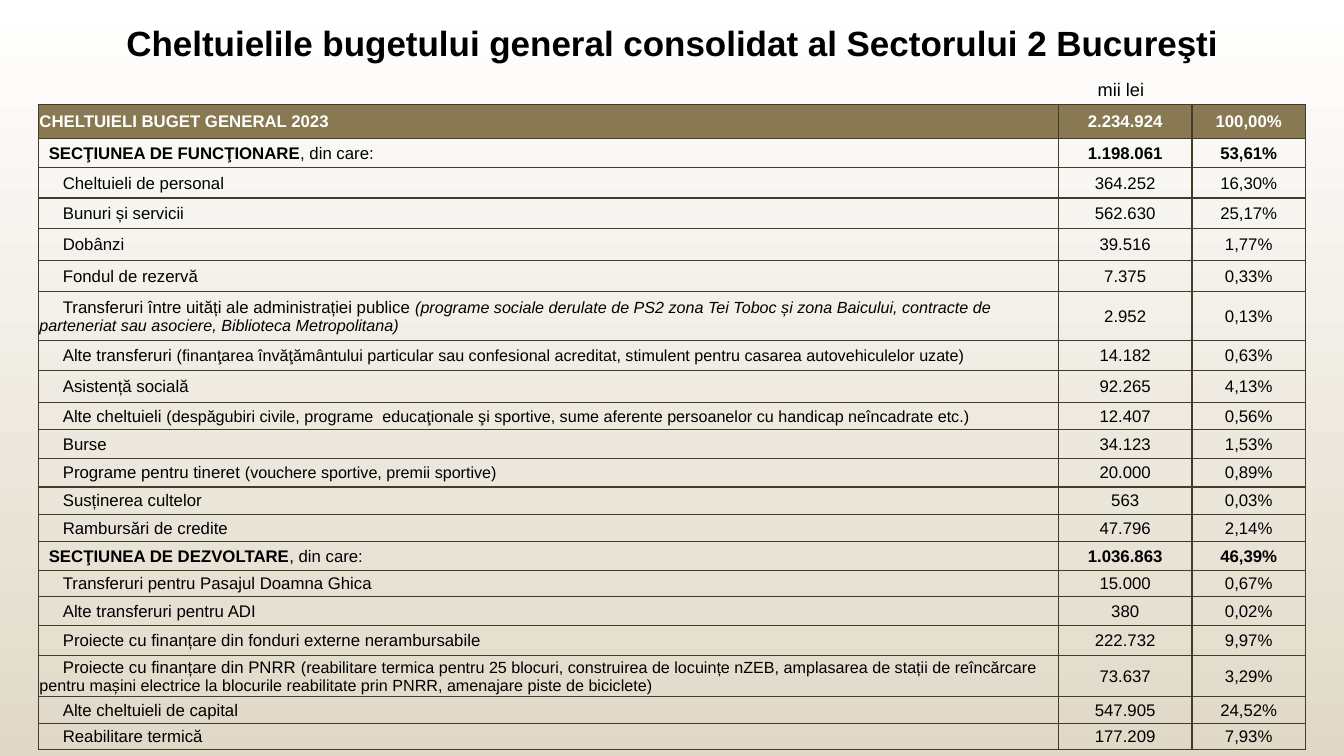
from lxml import etree
from pptx import Presentation
from pptx.dml.color import RGBColor
from pptx.enum.text import MSO_ANCHOR, PP_ALIGN
from pptx.oxml.ns import qn
from pptx.util import Pt

LEFT, CENTER = PP_ALIGN.LEFT, PP_ALIGN.CENTER
MIDDLE = MSO_ANCHOR.MIDDLE

COLORS = {
    "text": "000000",
    "header_text": "FFFFFF",
    "header": "887952",
    "border": "443C29",
    "bg_top": "FFFFFF",
    "bg_bottom": "E0D9C8",
}
FONT = "Arial"
COL_WIDTHS = [728.5, 95.5, 81]
INDENTS = {"total": 0, "section": 6.7, "item": 16.7}

ROWS = [
    ("total", 24.5, "CHELTUIELI BUGET GENERAL 2023", "", "2.234.924", "100,00%"),
    ("section", 20.5, "SECŢIUNEA DE FUNCŢIONARE", ", din care:", "1.198.061", "53,61%"),
    ("item", 22, "Cheltuieli de personal", "", "364.252", "16,30%"),
    ("item", 22, "Bunuri și servicii", "", "562.630", "25,17%"),
    ("item", 22.5, "Dobânzi", "", "39.516", "1,77%"),
    ("item", 22.5, "Fondul de rezervă", "", "7.375", "0,33%"),
    ("item", 35, "Transferuri între uități ale administrației publice ",
     "(programe sociale derulate de PS2 zona Tei Toboc și zona Baicului, contracte de "
     "parteneriat sau asociere, Biblioteca Metropolitana)", "2.952", "0,13%"),
    ("item", 21, "Alte transferuri ",
     "(finanţarea învăţământului particular sau confesional acreditat, stimulent pentru "
     "casarea autovehiculelor uzate)", "14.182", "0,63%"),
    ("item", 23, "Asistență socială", "", "92.265", "4,13%"),
    ("item", 19.5, "Alte cheltuieli ",
     "(despăgubiri civile, programe  educaţionale şi sportive, sume aferente persoanelor "
     "cu handicap neîncadrate etc.)", "12.407", "0,56%"),
    ("item", 20.5, "Burse", "", "34.123", "1,53%"),
    ("item", 20.5, "Programe pentru tineret ", "(vouchere sportive, premii sportive)",
     "20.000", "0,89%"),
    ("item", 19.5, "Susținerea cultelor", "", "563", "0,03%"),
    ("item", 19.5, "Rambursări de credite", "", "47.796", "2,14%"),
    ("section", 20.5, "SECŢIUNEA DE DEZVOLTARE", ", din care:", "1.036.863", "46,39%"),
    ("item", 19, "Transferuri pentru Pasajul Doamna Ghica", "", "15.000", "0,67%"),
    ("item", 20.5, "Alte transferuri pentru ADI", "", "380", "0,02%"),
    ("item", 21.5, "Proiecte cu finanțare din fonduri externe nerambursabile", "",
     "222.732", "9,97%"),
    ("item", 29.5, "Proiecte cu finanțare din PNRR ",
     "(reabilitare termica pentru 25 blocuri, construirea de locuințe nZEB, amplasarea de "
     "stații de reîncărcare pentru mașini electrice la blocurile reabilitate prin PNRR, "
     "amenajare piste de biciclete)", "73.637", "3,29%"),
    ("item", 19, "Alte cheltuieli de capital", "", "547.905", "24,52%"),
    ("item", 18.5, "Reabilitare termică", "", "177.209", "7,93%"),
]


def rgb(name):
    return RGBColor.from_string(COLORS[name])


def add_text(p, text, size=12, color="text", bold=False, italic=False, align=LEFT):
    p.alignment = align
    r = p.add_run()
    r.text = text
    r.font.name = FONT
    r.font.size = Pt(size)
    r.font.color.rgb = rgb(color)
    r.font.bold = bold
    r.font.italic = italic


def add_label(s, x, y, w, h, text, wrap=True, **fmt):
    tf = s.shapes.add_textbox(Pt(x), Pt(y), Pt(w), Pt(h)).text_frame
    tf.word_wrap = wrap
    add_text(tf.paragraphs[0], text, **fmt)


def set_background(s):
    fill = s.background.fill
    fill.gradient()
    fill.gradient_angle = 270
    for stop, name in zip(fill.gradient_stops, ("bg_top", "bg_bottom")):
        stop.color.rgb = rgb(name)


def set_borders(cell):
    tc_pr = cell._tc.get_or_add_tcPr()
    for side in ("a:lnL", "a:lnR", "a:lnT", "a:lnB"):
        ln = etree.SubElement(tc_pr, qn(side), w=str(Pt(1)))
        solid = etree.SubElement(ln, qn("a:solidFill"))
        etree.SubElement(solid, qn("a:srgbClr"), val=COLORS["border"])


def format_cell(cell, kind):
    cell.vertical_anchor = MIDDLE
    cell.margin_left = cell.margin_right = cell.margin_top = Pt(0.7)
    cell.margin_bottom = Pt(0)
    set_borders(cell)
    if kind == "total":
        cell.fill.solid()
        cell.fill.fore_color.rgb = rgb("header")
    else:
        cell.fill.background()


def fill_row(cells, kind, name, detail, amount, share):
    for cell in cells:
        format_cell(cell, kind)
    name_p, amount_p, share_p = [cell.text_frame.paragraphs[0] for cell in cells]
    fmt = {"bold": kind != "item", "color": "header_text" if kind == "total" else "text"}
    name_p._p.get_or_add_pPr().set("indent", str(Pt(INDENTS[kind])))
    add_text(name_p, name, **fmt)
    if detail:
        add_text(name_p, detail, size=11.5 if kind == "item" else 12,
                 italic=detail.startswith("(programe sociale"))
    add_text(amount_p, amount, align=CENTER, **fmt)
    add_text(share_p, share, align=CENTER, **fmt)


def add_budget_table(s, x, y):
    height = sum(row[1] for row in ROWS)
    table = s.shapes.add_table(len(ROWS), len(COL_WIDTHS), Pt(x), Pt(y),
                               Pt(sum(COL_WIDTHS)), Pt(height)).table
    table.first_row = table.horz_banding = False
    for col, width in zip(table.columns, COL_WIDTHS):
        col.width = Pt(width)
    for row, (kind, row_height, *texts) in zip(table.rows, ROWS):
        row.height = Pt(row_height)
        fill_row(list(row.cells), kind, *texts)


def main():
    prs = Presentation()
    prs.slide_width, prs.slide_height = Pt(960), Pt(540)
    s = prs.slides.add_slide(prs.slide_layouts[6])
    set_background(s)
    add_label(s, 77.5, 11.5, 805, 28,
              "Cheltuielile bugetului general consolidat al Sectorului 2 Bucureşti",
              size=25, bold=True, align=CENTER)
    add_budget_table(s, 27.5, 74.5)
    add_label(s, 777, 52.5, 48, 23, "mii lei", wrap=False, size=13)
    prs.save("out.pptx")


if __name__ == "__main__":
    main()
